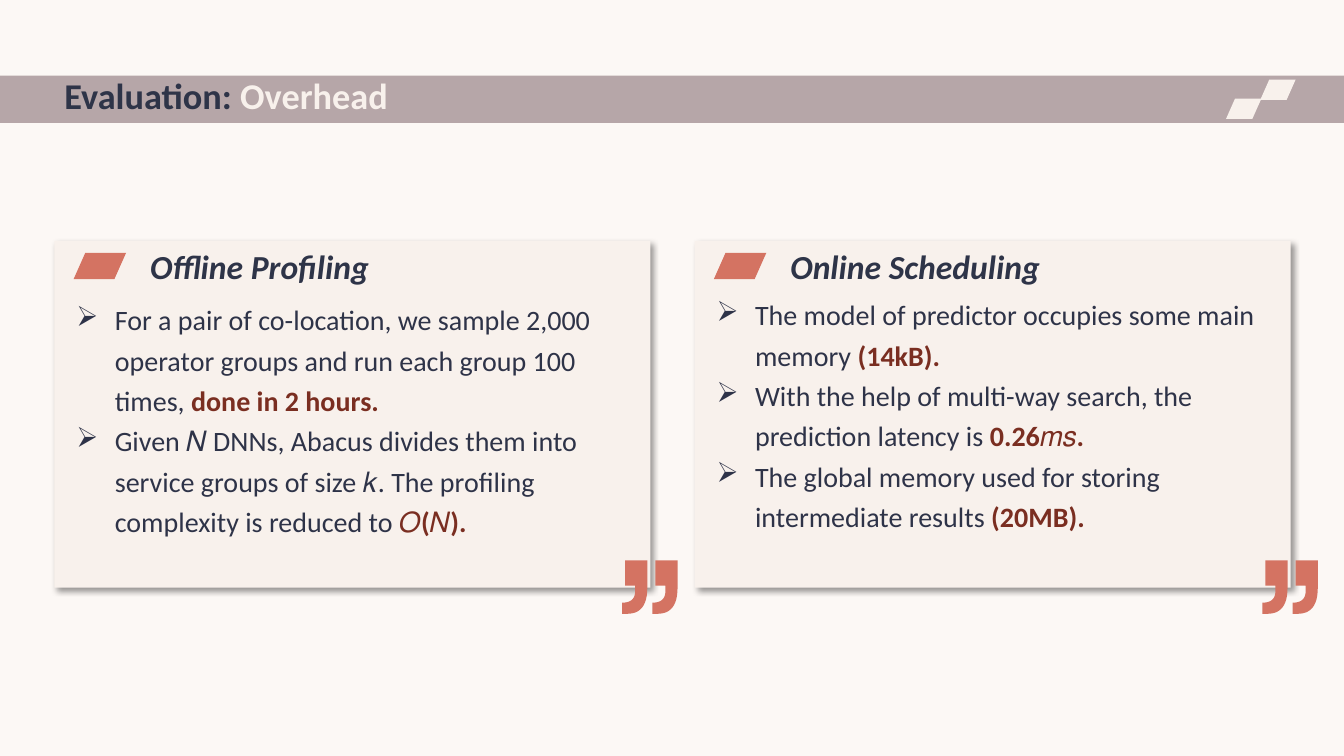
import pptx
import pptx.util
import pptx.dml.color
import pptx.enum.shapes
import pptx.enum.text
import pptx.oxml
import pptx.oxml.ns

Inches = pptx.util.Inches
SHAPE = pptx.enum.shapes.MSO_SHAPE
ANCHOR = pptx.enum.text.MSO_ANCHOR
rgb = pptx.dml.color.RGBColor.from_string

THEME = {
    "font": "Calibri",
    "background": "FCF8F5", "bar": "B6A6A8", "cream": "F8F1EC",
    "navy": "2E3448", "body": "2E3348", "coral": "D47362", "strong": "7A2E21",
    "title_size": 25.9, "heading_size": 24, "body_size": 20,
}
SHADOW = (
    '<a:effectLst xmlns:a="http://schemas.openxmlformats.org/drawingml/2006/main">'
    '<a:outerShdw blurRad="50800" dist="38100" dir="2700000" algn="tl" rotWithShape="0">'
    '<a:srgbClr val="000000"><a:alpha val="40000"/></a:srgbClr>'
    '</a:outerShdw></a:effectLst>'
)


def add_shape(kind, x, y, w, h, color):
    sp = s.shapes.add_shape(kind, Inches(x), Inches(y), Inches(w), Inches(h))
    sp.shadow.inherit = False
    sp.fill.solid()
    sp.fill.fore_color.rgb = rgb(THEME[color])
    sp.line.fill.background()
    if kind == SHAPE.PARALLELOGRAM:
        sp.adjustments[0] = 0.444
    return sp


def add_text(paragraphs, x, y, w, h, size, italic=False, bullet=None,
             spacing=1.0, anchor=ANCHOR.TOP):
    tf = s.shapes.add_textbox(Inches(x), Inches(y), Inches(w), Inches(h)).text_frame
    tf.word_wrap = True
    tf.vertical_anchor = anchor
    for i, runs in enumerate(paragraphs):
        p = tf.paragraphs[0] if i == 0 else tf.add_paragraph()
        p.line_spacing = spacing
        if bullet:
            pPr = p._p.get_or_add_pPr()
            pPr.set("marL", str(Inches(0.5)))
            pPr.set("indent", str(Inches(-0.38)))
            bu = pptx.oxml.ns.qn("a:buChar")
            pPr.append(pPr.makeelement(bu, {"char": bullet}))
        for text, color, bold in runs:
            r = p.add_run()
            r.text = text
            r.font.name = THEME["font"]
            r.font.size = pptx.util.Pt(THEME[size])
            r.font.color.rgb = rgb(THEME[color])
            r.font.bold = bold
            r.font.italic = italic


prs = pptx.Presentation()
prs.slide_width = Inches(13.33)
prs.slide_height = Inches(7.5)
s = prs.slides.add_slide(prs.slide_layouts[6])
s.background.fill.solid()
s.background.fill.fore_color.rgb = rgb(THEME["background"])

add_shape(SHAPE.RECTANGLE, 0, 0.75, 13.33, 0.47, "bar")
for x, y in [(12.5, 0.79), (12.16, 0.98)]:
    add_shape(SHAPE.PARALLELOGRAM, x, y, 0.35, 0.2, "cream")
add_text([[("Evaluation: ", "navy", True), ("Overhead", "cream", True)]],
         0.54, 0.75, 11.62, 0.47, "title_size", spacing=0.8, anchor=ANCHOR.MIDDLE)

curves = []
for a, b, c, d in [
    ((0.25, 0.27), (0.25, 0.45), (0.18, 0.53), (0.05, 0.53)),
    ((0, 0.42), (0.09, 0.42), (0.13, 0.38), (0.13, 0.3)),
]:
    curves.append([
        tuple((1 - t) ** 3 * a[k] + 3 * (1 - t) ** 2 * t * b[k]
              + 3 * (1 - t) * t ** 2 * c[k] + t ** 3 * d[k] for k in (0, 1))
        for t in [n / 12 for n in range(13)]
    ])
quote_mark = [(0.03, 0), (0.25, 0), *curves[0], (0, 0.53), *curves[1], (0.13, 0.25), (0.03, 0.25)]

cards = [
    (0.54, "Offline Profiling", 2.89, [
        [("For a pair of co-location, we sample 2,000 operator groups and run each group 100 times, ",
          "body", False), ("done in 2 hours.", "strong", True)],
        [("Given 𝑁 DNNs, Abacus divides them into service groups of size ", "body", False),
         ("𝑘", "body", True), (". The profiling complexity is reduced to ", "body", False),
         ("𝑂(𝑁).", "strong", True)],
    ]),
    (6.89, "Online Scheduling", 2.84, [
        [("The model of predictor occupies some main memory ", "body", False),
         ("(14kB).", "strong", True)],
        [("With the help of multi-way search, the prediction latency is ", "body", False),
         ("0.26𝑚𝑠.", "strong", True)],
        [("The global memory used for storing intermediate results ", "body", False),
         ("(20MB).", "strong", True)],
    ]),
]
for left, heading, body_top, body in cards:
    card = add_shape(SHAPE.RECTANGLE, left, 2.39, 5.91, 3.44, "cream")
    spPr = card._element.spPr
    spPr.replace(spPr.find(pptx.oxml.ns.qn("a:effectLst")), pptx.oxml.parse_xml(SHADOW))
    add_shape(SHAPE.PARALLELOGRAM, left + 0.19, 2.51, 0.52, 0.26, "coral")

    marks = [[(Inches(left + 5.63 + dx + x), Inches(5.56 + y)) for x, y in quote_mark]
             for dx in (0, 0.3)]
    fb = s.shapes.build_freeform(*marks[0][0])
    fb.add_line_segments(marks[0][1:], close=True)
    fb.move_to(*marks[1][0])
    fb.add_line_segments(marks[1][1:], close=True)
    quote = fb.convert_to_shape()
    quote.shadow.inherit = False
    quote.fill.solid()
    quote.fill.fore_color.rgb = rgb(THEME["coral"])
    quote.line.fill.background()

    add_text([[(heading, "navy", True)]], left + 0.85, 2.39, 3.12, 0.5,
             "heading_size", italic=True)
    add_text(body, left, body_top, 5.91, 2.5, "body_size", bullet="➢", spacing=1.2)

prs.save("out.pptx")
